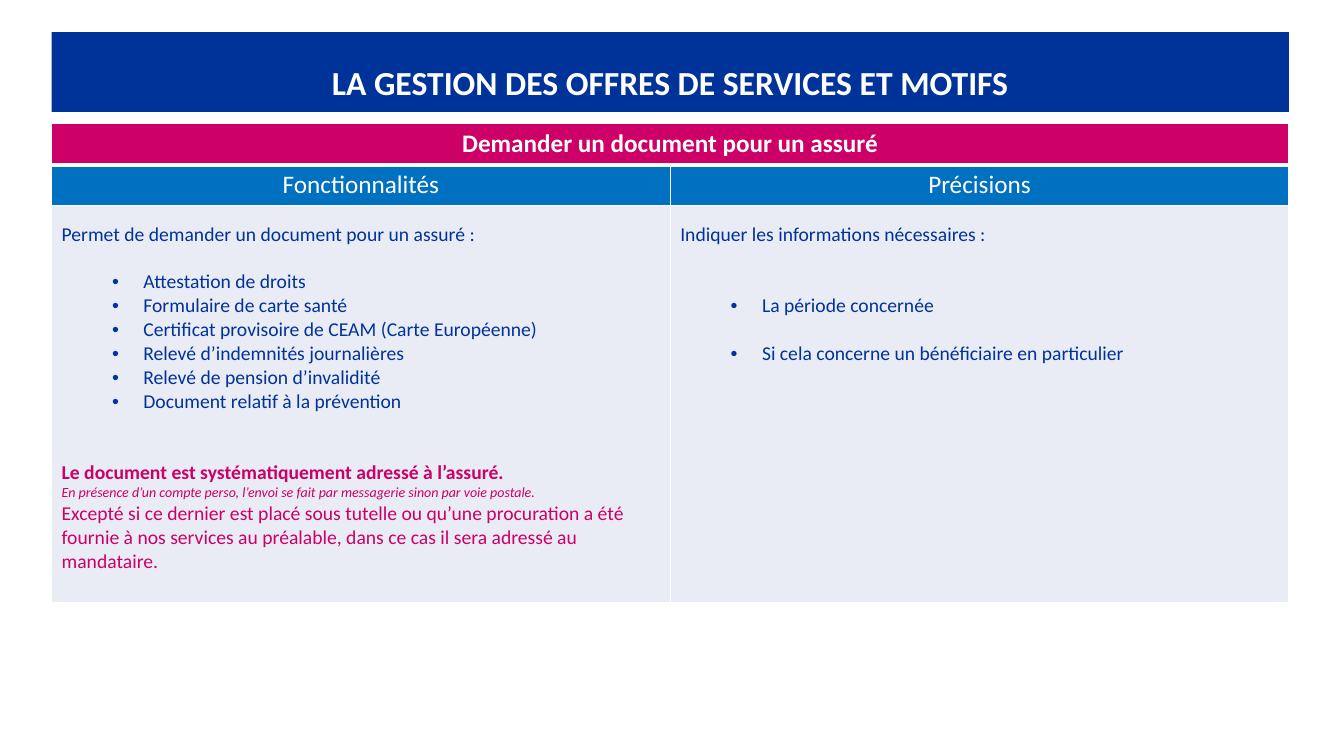
from dataclasses import dataclass

from lxml import etree
from pptx import Presentation
from pptx.dml.color import RGBColor
from pptx.enum.shapes import MSO_SHAPE
from pptx.enum.text import MSO_ANCHOR, PP_ALIGN
from pptx.oxml.ns import qn
from pptx.util import Cm, Pt

RECTANGLE = MSO_SHAPE.RECTANGLE
MIDDLE = MSO_ANCHOR.MIDDLE
CENTER = PP_ALIGN.CENTER
LEFT = PP_ALIGN.LEFT


@dataclass(frozen=True)
class Theme:
    """Colours, font and type sizes of the slide."""
    navy: str = "003399"
    magenta: str = "CC0066"
    blue: str = "0070C0"
    pale: str = "E9EBF5"
    white: str = "FFFFFF"
    font: str = "Calibri"
    title: int = 24
    heading: int = 18
    body: int = 14
    note: int = 10
    line: int = 17


THEME = Theme()

DOCUMENTS = [
    "Attestation de droits",
    "Formulaire de carte santé",
    "Certificat provisoire de CEAM (Carte Européenne)",
    "Relevé d’indemnités journalières",
    "Relevé de pension d’invalidité",
    "Document relatif à la prévention",
]
DETAILS = ["La période concernée", "Si cela concerne un bénéficiaire en particulier"]


def add_text(frame, text, size=THEME.body, color=THEME.navy, bold=False, italic=False,
             align=LEFT, spacing=1.0, before=0, bullet=False):
    """Write one paragraph, using the frame's empty first one when it is free."""
    first = frame.paragraphs[0]
    paragraph = frame.add_paragraph() if first.runs else first
    if bullet:
        paragraph.level = 1
        properties = paragraph._p.get_or_add_pPr()
        properties.set("marL", str(Cm(2.06)))
        properties.set("indent", str(-Cm(0.79)))
        etree.SubElement(properties, qn("a:buFont")).set("typeface", "Arial")
        etree.SubElement(properties, qn("a:buChar")).set("char", "•")
    paragraph.alignment = align
    paragraph.line_spacing = spacing
    paragraph.space_before = Pt(before)
    run = paragraph.add_run()
    run.text = text
    font = run.font
    font.name, font.size, font.bold, font.italic = THEME.font, Pt(size), bold, italic
    font.color.rgb = RGBColor.from_string(color)


def add_bullets(frame, items, before, gap=0):
    """Write a bulleted list, set apart from the text above it."""
    for index, item in enumerate(items):
        add_text(frame, item, before=gap if index else before, bullet=True)


def style_cell(cell, fill, top=1, bottom=1):
    """Give a cell its fill and white borders."""
    properties = cell._tc.get_or_add_tcPr()
    for side, width in (("L", 1), ("R", 1), ("T", top), ("B", bottom)):
        border = etree.SubElement(properties, qn(f"a:ln{side}"), w=str(Pt(width)))
        paint = etree.SubElement(border, qn("a:solidFill"))
        etree.SubElement(paint, qn("a:srgbClr"), val=THEME.white)
    cell.fill.solid()
    cell.fill.fore_color.rgb = RGBColor.from_string(fill)


def add_banner(slide, text):
    """Add the title banner."""
    banner = slide.shapes.add_shape(RECTANGLE, Cm(1.3), Cm(0.81), Cm(31.18), Cm(2.01))
    banner.shadow.inherit = False
    banner.fill.solid()
    banner.fill.fore_color.rgb = RGBColor.from_string(THEME.navy)
    banner.line.fill.background()
    frame = banner.text_frame
    frame.word_wrap = True
    frame.vertical_anchor = MIDDLE
    add_text(frame, text, THEME.title, THEME.white, bold=True, align=CENTER, spacing=1.5)


def add_service_table(slide):
    """Add the empty, styled service table and return it."""
    table = slide.shapes.add_table(3, 2, Cm(1.3), Cm(3.12), Cm(31.18), Cm(12.06)).table
    table.first_row = table.horz_banding = False
    for column in table.columns:
        column.width = Cm(15.59)
    styles = ((1.03, THEME.magenta, 1, 3), (1.03, THEME.blue, 3, 1), (10, THEME.pale, 1, 1))
    for row, (height, fill, top, bottom) in zip(table.rows, styles):
        row.height = Cm(height)
        for cell in row.cells:
            style_cell(cell, fill, top, bottom)
    table.cell(0, 0).merge(table.cell(0, 1))
    return table


def add_heading(cell, text, bold=False):
    """Write a centred white heading in a cell."""
    add_text(cell.text_frame, text, THEME.heading, THEME.white, bold=bold, align=CENTER)


def fill_features(frame):
    """Write the documents on offer and how they are sent."""
    add_text(frame, "Permet de demander un document pour un assuré :", spacing=1.5)
    add_bullets(frame, DOCUMENTS, before=THEME.line)
    add_text(frame, "Le document est systématiquement adressé à l’assuré.",
             color=THEME.magenta, bold=True, before=2 * THEME.line)
    add_text(frame, "En présence d’un compte perso, l’envoi se fait par messagerie "
             "sinon par voie postale.", THEME.note, THEME.magenta, italic=True)
    add_text(frame, "Excepté si ce dernier est placé sous tutelle ou qu’une procuration a été "
             "fournie à nos services au préalable, dans ce cas il sera adressé au mandataire.",
             color=THEME.magenta)


def fill_details(frame):
    """Write the information to supply."""
    add_text(frame, "Indiquer les informations nécessaires :", spacing=1.5)
    add_bullets(frame, DETAILS, before=2 * THEME.line, gap=THEME.line)


def main():
    """Build and save the slide."""
    deck = Presentation()
    deck.slide_width, deck.slide_height = Cm(33.87), Cm(19.05)
    slide = deck.slides.add_slide(deck.slide_layouts[6])
    add_banner(slide, "LA GESTION DES OFFRES DE SERVICES ET MOTIFS")
    table = add_service_table(slide)
    add_heading(table.cell(0, 0), "Demander un document pour un assuré", bold=True)
    add_heading(table.cell(1, 0), "Fonctionnalités")
    add_heading(table.cell(1, 1), "Précisions")
    fill_features(table.cell(2, 0).text_frame)
    fill_details(table.cell(2, 1).text_frame)
    deck.save("out.pptx")


if __name__ == "__main__":
    main()
